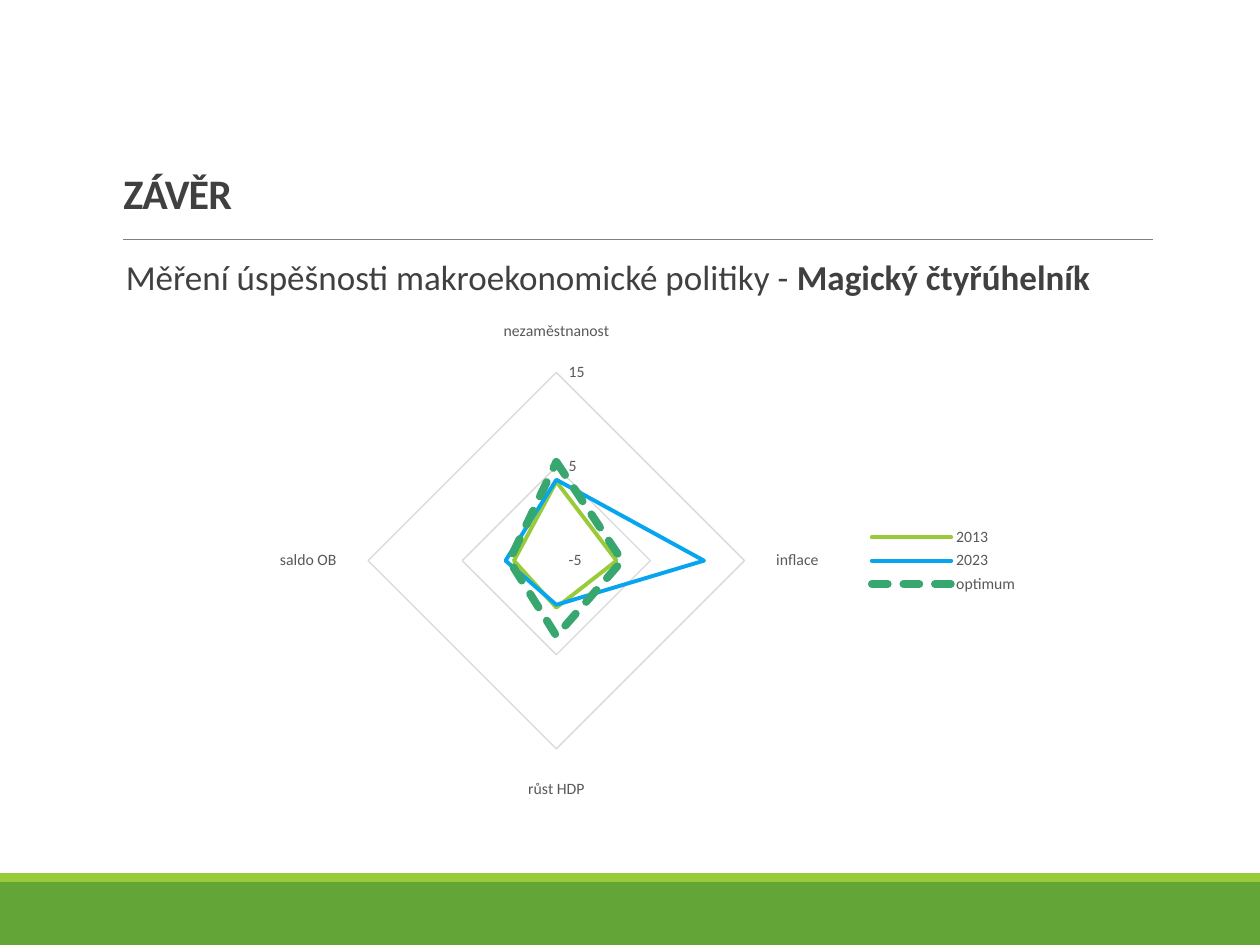
from pptx import Presentation
from pptx.chart.data import CategoryChartData
from pptx.dml.color import RGBColor
from pptx.enum.chart import XL_CHART_TYPE as ChartType
from pptx.enum.chart import XL_LEGEND_POSITION as LegendPosition
from pptx.enum.chart import XL_TICK_MARK as TickMark
from pptx.enum.dml import MSO_LINE_DASH_STYLE as Dash
from pptx.enum.shapes import MSO_CONNECTOR as Connector
from pptx.enum.shapes import MSO_SHAPE as Shape
from pptx.enum.text import MSO_ANCHOR as Anchor
from pptx.enum.text import PP_ALIGN as Align
from pptx.oxml.ns import qn
from pptx.oxml.xmlchemy import OxmlElement
from pptx.util import Inches, Pt


def color(hex_string):
    return RGBColor.from_string(hex_string)


def set_font(font, size, hex_string):
    font.name = "Calibri"
    font.size = Pt(size)
    font.color.rgb = color(hex_string)


presentation = Presentation()
presentation.slide_width = Inches(10)
presentation.slide_height = Inches(7.5)
slide = presentation.slides.add_slide(presentation.slide_layouts[5])

# Footer bands
for top, height, fill in [(7, 0.5, "63A537"), (6.93, 0.07, "99CB38")]:
    band = slide.shapes.add_shape(
        Shape.RECTANGLE, 0, Inches(top), Inches(10), Inches(height))
    band.shadow.inherit = False
    band.fill.solid()
    band.fill.fore_color.rgb = color(fill)
    band.line.fill.background()

# Rule under the title
rule = slide.shapes.add_connector(
    Connector.STRAIGHT, Inches(0.98), Inches(1.9), Inches(9.15), Inches(1.9))
rule.line.color.rgb = color("808080")
rule.line.width = Pt(0.5)
rule._element.spPr.append(OxmlElement("a:effectLst"))

# Title
title = slide.shapes.title
title.left, title.top = Inches(0.88), Inches(0.55)
title.width, title.height = Inches(8.25), Inches(1.23)
title.text_frame.vertical_anchor = Anchor.BOTTOM
paragraph = title.text_frame.paragraphs[0]
paragraph.alignment = Align.LEFT
paragraph.line_spacing = 0.85
run = paragraph.add_run()
run.text = "ZÁVĚR"
set_font(run.font, 24, "404040")
run.font.bold = True
run.font._element.set("spc", "-50")

# Subtitle
subtitle = slide.shapes.add_textbox(
    Inches(0.9), Inches(2.02), Inches(8.25), Inches(4.4))
subtitle.text_frame.word_wrap = True
subtitle.text_frame.margin_right = 0
paragraph = subtitle.text_frame.paragraphs[0]
paragraph.line_spacing = 0.9
set_font(paragraph.font, 20, "404040")
paragraph.add_run().text = "Měření úspěšnosti makroekonomické politiky - "
run = paragraph.add_run()
run.text = "Magický čtyřúhelník"
run.font.bold = True

# Radar chart
series_styles = [
    ("2013", (3.4, 1.4, 0, -0.5), "99CB38", 2.25, None),
    ("2023", (3.6, 10.7, -0.3, 0.4), "08A5EF", 2.25, None),
    ("optimum", (5.5, 2, 3, 0), "37A76F", 4.5, Dash.SQUARE_DOT),
]
chart_data = CategoryChartData()
chart_data.categories = ["nezaměstnanost", "inflace", "růst HDP", "saldo OB"]
for name, values, *_ in series_styles:
    chart_data.add_series(name, values)
chart = slide.shapes.add_chart(
    ChartType.RADAR, Inches(1.84), Inches(2.48), Inches(6.34), Inches(3.94),
    chart_data).chart
set_font(chart.font, 10, "000000")
chart.has_title = False
chart.plots[0].vary_by_categories = False

for series, (_, _, line_color, width, dash) in zip(chart.plots[0].series, series_styles):
    series.smooth = False
    line = series.format.line
    line.color.rgb = color(line_color)
    line.width = Pt(width)
    if dash:
        line.dash_style = dash
    # Round line ends and corners
    outline = series._element.find(qn("c:spPr")).find(qn("a:ln"))
    outline.set("cap", "rnd")
    outline.append(OxmlElement("a:round"))

# Axes
category_axis, value_axis = chart.category_axis, chart.value_axis
for axis, tick in [(category_axis, TickMark.NONE), (value_axis, TickMark.OUTSIDE)]:
    axis.major_tick_mark = tick
    axis.minor_tick_mark = TickMark.NONE
    axis.format.line.fill.background()
    set_font(axis.tick_labels.font, 9, "595959")
category_axis.has_major_gridlines = False
value_axis.minimum_scale = -5
value_axis.maximum_scale = 15
value_axis.major_unit = 10
value_axis.has_major_gridlines = True
gridline = value_axis.major_gridlines.format.line
gridline.color.rgb = color("D9D9D9")
gridline.width = Pt(0.75)

# Legend
chart.has_legend = True
chart.legend.position = LegendPosition.RIGHT
chart.legend.include_in_layout = False
set_font(chart.legend.font, 9, "595959")

presentation.save("out.pptx")
